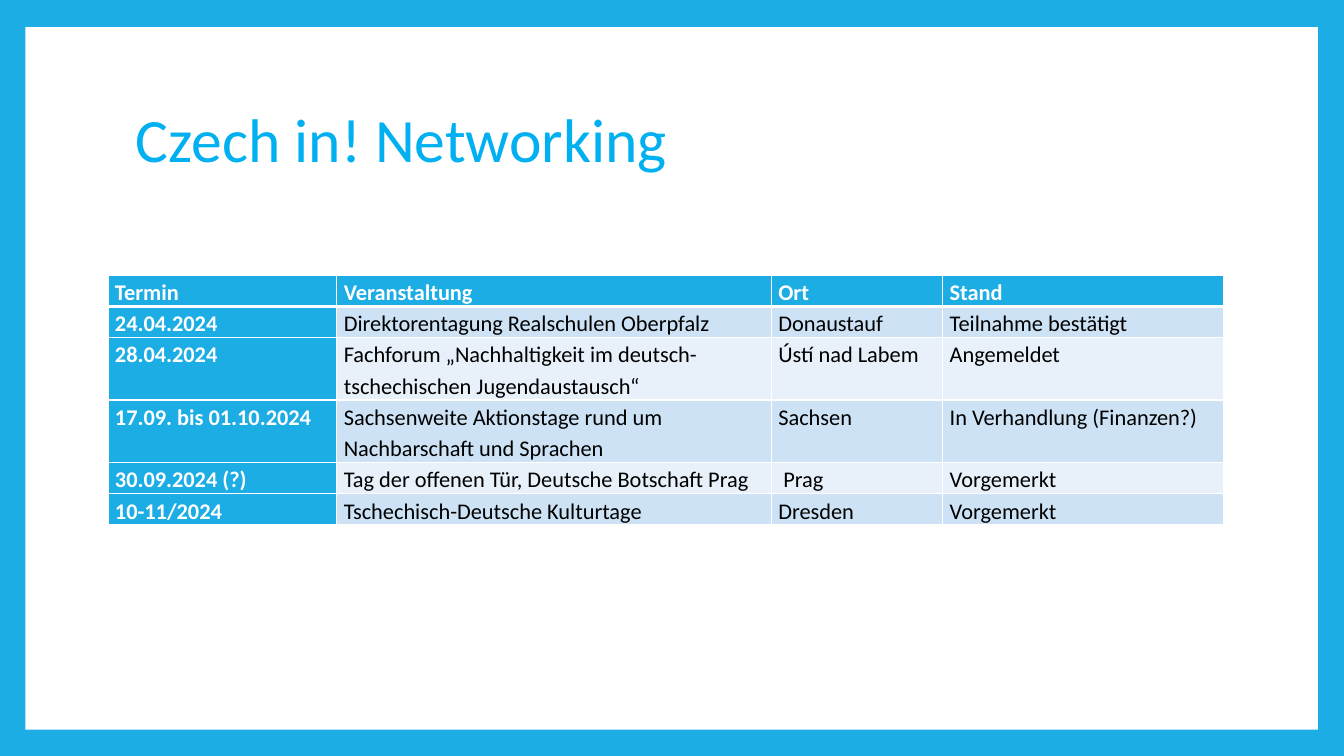
from dataclasses import dataclass

from pptx import Presentation
from pptx.dml.color import RGBColor
from pptx.enum.shapes import MSO_SHAPE
from pptx.enum.text import MSO_ANCHOR
from pptx.oxml import parse_xml
from pptx.oxml.ns import nsdecls
from pptx.util import Inches, Pt


@dataclass(frozen=True)
class Theme:
    font: str = "Calibri"
    title_size: int = 44
    table_size: int = 16
    frame: str = "1CADE4"
    title: str = "00B0F0"
    white: str = "FFFFFF"
    black: str = "000000"
    bands: tuple = ("CDE3F5", "E8F1FA")
    rule: int = 1
    header_rule: int = 3


class SlideBuilder:
    def __init__(self, presentation, theme):
        self.theme = theme
        self.width = presentation.slide_width
        self.height = presentation.slide_height
        self.slide = presentation.slides.add_slide(presentation.slide_layouts[6])

    def across(self, percent):
        return round(self.width * percent / 100)

    def down(self, percent):
        return round(self.height * percent / 100)

    def area(self, left, top, width, height):
        return self.across(left), self.down(top), self.across(width), self.down(height)

    def paint(self, fill, color):
        fill.solid()
        fill.fore_color.rgb = RGBColor.from_string(color)

    def background(self, color):
        self.paint(self.slide.background.fill, color)

    def panel(self, place, color):
        shape = self.slide.shapes.add_shape(MSO_SHAPE.RECTANGLE, *self.area(*place))
        shape.shadow.inherit = False
        self.paint(shape.fill, color)
        shape.line.fill.background()

    def text_run(self, paragraph, text, size, color, bold=False):
        run = paragraph.add_run()
        run.text = text
        run.font.name = self.theme.font
        run.font.size = Pt(size)
        run.font.bold = bold
        run.font.color.rgb = RGBColor.from_string(color)

    def title(self, place, text):
        frame = self.slide.shapes.add_textbox(*self.area(*place)).text_frame
        frame.word_wrap = True
        frame.vertical_anchor = MSO_ANCHOR.MIDDLE
        paragraph = frame.paragraphs[0]
        paragraph.line_spacing = 0.9
        self.text_run(paragraph, text, self.theme.title_size, self.theme.title)

    def borders(self, cell, top, bottom):
        properties = cell._tc.get_or_add_tcPr()
        rule = self.theme.rule
        for side, points in (("L", rule), ("R", rule), ("T", top), ("B", bottom)):
            properties.append(parse_xml(
                f'<a:ln{side} {nsdecls("a")} w="{Pt(points)}"><a:solidFill>'
                f'<a:srgbClr val="{self.theme.white}"/></a:solidFill></a:ln{side}>'))

    def cell(self, cell, text, row, column):
        theme = self.theme
        heading = row == 0 or column == 0
        cell.margin_left = cell.margin_right = Inches(0.07)
        cell.margin_top = cell.margin_bottom = 0
        self.borders(cell, theme.header_rule if row == 1 else theme.rule,
                     theme.header_rule if row == 0 else theme.rule)
        self.paint(cell.fill, theme.frame if heading else theme.bands[(row - 1) % 2])
        paragraph = cell.text_frame.paragraphs[0]
        paragraph.line_spacing = 1.15
        self.text_run(paragraph, text, theme.table_size,
                      theme.white if heading else theme.black, heading)

    def table(self, left, top, columns, line_height, row_lines, rows):
        place = self.area(left, top, sum(columns), line_height * sum(row_lines))
        table = self.slide.shapes.add_table(len(rows), len(columns), *place).table
        for column, width in zip(table.columns, columns):
            column.width = self.across(width)
        for row, lines in zip(table.rows, row_lines):
            row.height = self.down(line_height * lines)
        for row, texts in enumerate(rows):
            for column, text in enumerate(texts):
                self.cell(table.cell(row, column), text, row, column)


EVENTS = [
    ("Termin", "Veranstaltung", "Ort", "Stand"),
    ("24.04.2024", "Direktorentagung Realschulen Oberpfalz", "Donaustauf", "Teilnahme bestätigt"),
    ("28.04.2024", "Fachforum „Nachhaltigkeit im deutsch-tschechischen Jugendaustausch“",
     "Ústí nad Labem", "Angemeldet"),
    ("17.09. bis 01.10.2024", "Sachsenweite Aktionstage rund um Nachbarschaft und Sprachen",
     "Sachsen", "In Verhandlung (Finanzen?)"),
    ("30.09.2024 (?)", "Tag der offenen Tür, Deutsche Botschaft Prag", " Prag", "Vorgemerkt"),
    ("10-11/2024", "Tschechisch-Deutsche Kulturtage", "Dresden", "Vorgemerkt"),
]


def main():
    presentation = Presentation()
    presentation.slide_width = Inches(13.33)
    presentation.slide_height = Inches(7.5)
    theme = Theme()
    builder = SlideBuilder(presentation, theme)
    builder.background(theme.frame)
    builder.panel((1.88, 3.6, 96.17, 92.93), theme.white)
    builder.title((9.38, 8.93, 81, 19.73), "Czech in! Networking")
    builder.table(8.03, 36.4, (17.03, 32.33, 12.75, 20.93), 4.13, (1, 1, 2, 2, 1, 1), EVENTS)
    presentation.save("out.pptx")


if __name__ == "__main__":
    main()
